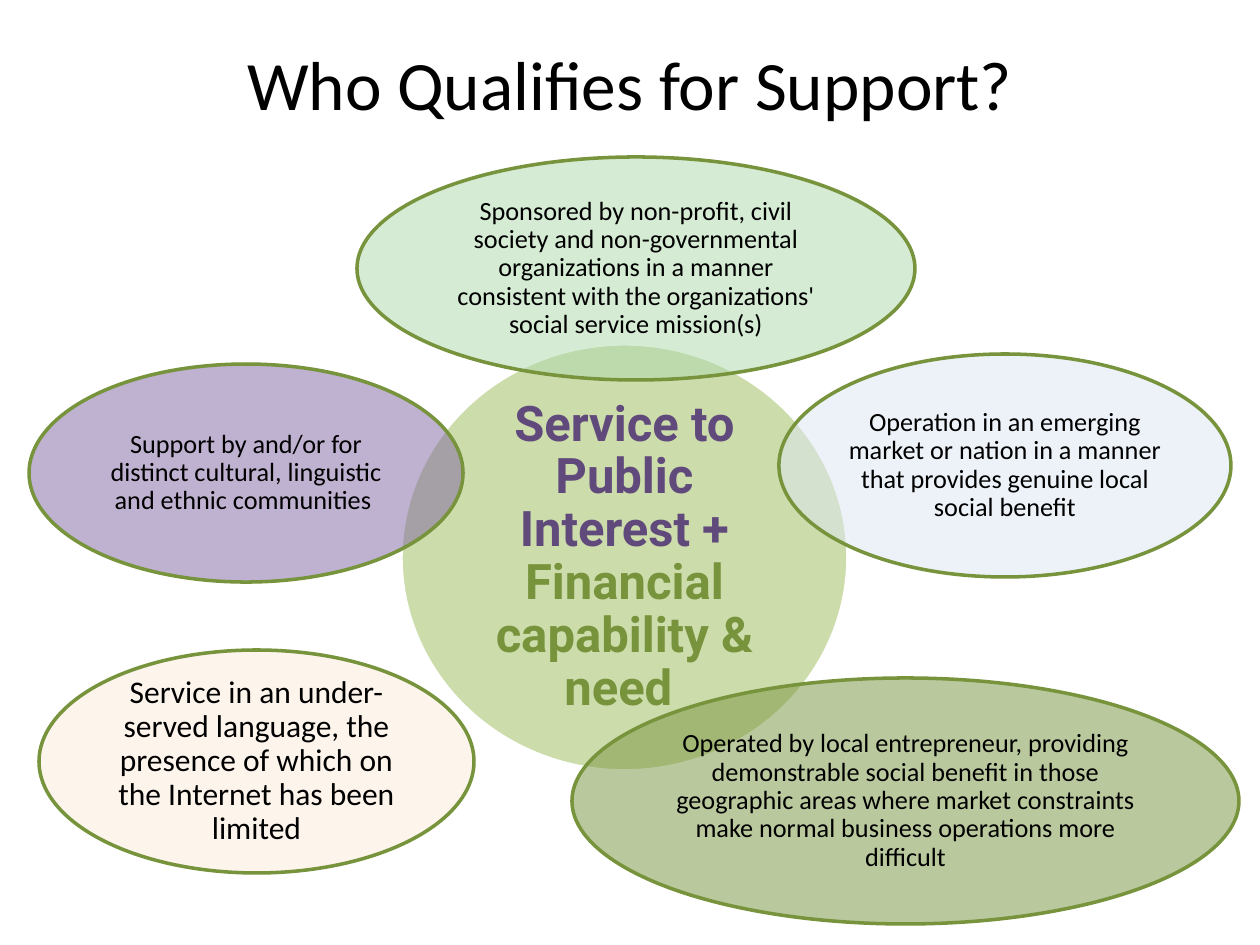
from lxml.etree import SubElement
from pptx import Presentation
from pptx.dml.color import RGBColor
from pptx.enum.shapes import MSO_SHAPE
from pptx.enum.text import MSO_ANCHOR, PP_ALIGN
from pptx.oxml.ns import qn
from pptx.util import Emu, Pt

SCALE = 914400 // 126
GREEN = "77933C"
BLACK = "000000"

# place, fill, text size, inset, text
GROUNDS = [
    ((357, 157, 558, 223), "ADD9AB", 15, 3,
     "Sponsored by non-profit, civil society and non-governmental organizations "
     "in a manner consistent with the organizations' social service mission(s)"),
    ((779, 354, 452, 223), "DCE6F2", 15, 3,
     "Operation in an emerging market or nation in a manner that provides "
     "genuine local social benefit"),
    ((572, 678, 667, 246), GREEN, 15, 3,
     "Operated by local entrepreneur, providing demonstrable social benefit in "
     "those geographic areas where market constraints make normal business "
     "operations more difficult"),
    ((39, 650, 435, 223), "FDEADA", 18, 4,
     "Service in an under-served language, the presence of which on the "
     "Internet has been limited"),
    ((29, 364, 434, 218), "8064A2", 15, 3,
     "Support by and/or for distinct cultural, linguistic and ethnic "
     "communities "),
]


def px(n):
    return Emu(n * SCALE)


def color(code):
    return RGBColor.from_string(code)


def apply(obj, form):
    for key, val in form.items():
        setattr(obj, key, val)


def write(shape, runs, form, inset, **edges):
    """Fill a shape with one centred paragraph of (text, colour) runs."""
    frame = shape.text_frame
    sides = {f"margin_{side}": px(edges.get(side, inset))
             for side in ("left", "top", "right", "bottom")}
    apply(frame, {"word_wrap": True, "vertical_anchor": MSO_ANCHOR.MIDDLE, **sides})
    para = frame.paragraphs[0]
    para.alignment = PP_ALIGN.CENTER
    for text, code in runs:
        run = para.add_run()
        run.text = text
        apply(run.font, form)
        run.font.color.rgb = color(code)
    return para


def title(slide, text):
    box = slide.shapes.add_textbox(*map(px, (63, 32, 1134, 179)))
    form = {"name": "Calibri", "size": Pt(39.6)}
    write(box, [(text, BLACK)], form, 6, bottom=83)


def oval(slide, place, fill, edge, runs, form, inset):
    """Draw a half-transparent ellipse with its text."""
    shape = slide.shapes.add_shape(MSO_SHAPE.OVAL, *map(px, place))
    shape.shadow.inherit = False
    shape.fill.solid()
    shape.fill.fore_color.rgb = color(fill)
    tint = shape.fill._xPr.find(qn("a:solidFill"))[0]
    SubElement(tint, qn("a:alpha"), val="50000")
    shape.line.color.rgb = color(edge)
    shape.line.width = Pt(2)
    write(shape, runs, form, inset).line_spacing = 0.9


def main():
    deck = Presentation()
    apply(deck, {"slide_width": px(1260), "slide_height": px(945)})
    slide = deck.slides.add_slide(deck.slide_layouts[6])
    title(slide, "Who Qualifies for Support?")
    core = [("Service to Public Interest + ", "604A7B"),
            ("Financial capability & need ", GREEN)]
    bold = {"name": "Roboto", "size": Pt(28), "bold": True}
    oval(slide, (401, 344, 447, 427), "9BBB59", "FFFFFF", core, bold, 5)
    for place, fill, size, inset, text in GROUNDS:
        form = {"name": "Calibri", "size": Pt(size)}
        oval(slide, place, fill, GREEN, [(text, BLACK)], form, inset)
    deck.save("out.pptx")


if __name__ == "__main__":
    main()
